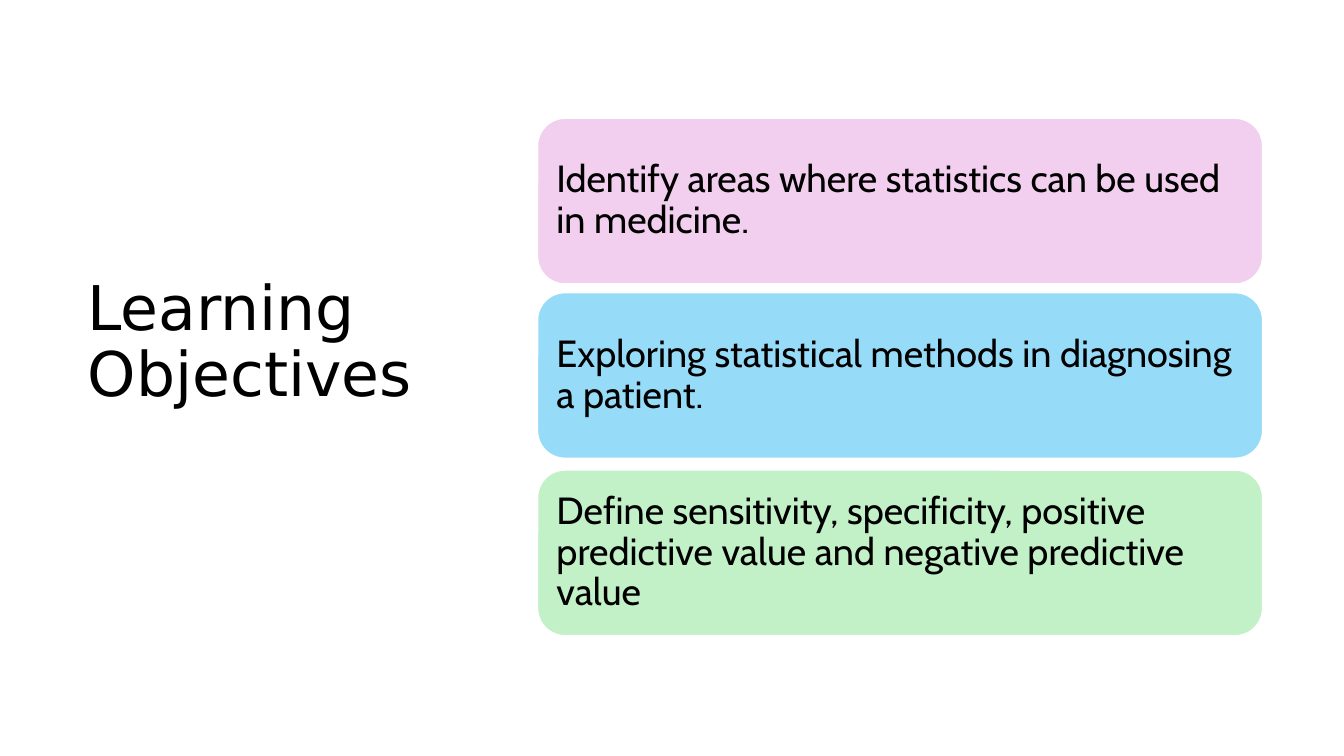
from dataclasses import dataclass

from pptx import Presentation
from pptx.dml.color import RGBColor
from pptx.enum import shapes, text
from pptx.util import Pt


@dataclass
class Card:
    top: float
    fill: str
    words: str


CARDS = [
    Card(84.24, "F2CFEE", "Identify areas where statistics can be used in medicine."),
    Card(208.8, "96DCF8", "Exploring statistical methods in diagnosing a patient."),
    Card(335.52, "C2F1C8", "Define sensitivity, specificity, positive predictive value "
                           "and negative predictive value"),
]
LEFT, WIDTH, HEIGHT = 383.76, 518.4, 118.8
INSET = 8


def paint(target, color: str) -> None:
    target.rgb = RGBColor.from_string(color)


def apply(target, **values) -> None:
    """Set each named attribute of the target."""
    for name, value in values.items():
        setattr(target, name, value)


def write(frame, words: str, face: str, size: float) -> None:
    frame.text = words
    apply(frame, word_wrap=True, auto_size=text.MSO_AUTO_SIZE.NONE,
          vertical_anchor=text.MSO_ANCHOR.MIDDLE)
    para = frame.paragraphs[0]
    apply(para, alignment=text.PP_ALIGN.LEFT, line_spacing=0.9)
    font = para.runs[0].font
    apply(font, name=face, size=Pt(size))
    paint(font.color, "000000")


def draw(slide, card: Card) -> None:
    box = slide.shapes.add_shape(
        shapes.MSO_SHAPE.ROUNDED_RECTANGLE,
        Pt(LEFT), Pt(card.top), Pt(WIDTH), Pt(HEIGHT))
    box.shadow.inherit = False
    box.fill.solid()
    paint(box.fill.fore_color, card.fill)
    paint(box.line.color, "FFFFFF")
    box.line.width = Pt(1.5)
    frame = box.text_frame
    apply(frame, **{f"margin_{side}": Pt(INSET)
                    for side in ("left", "top", "right", "bottom")})
    write(frame, card.words, "Cabin", 27)


def main() -> None:
    deck = Presentation()
    apply(deck, slide_width=Pt(960), slide_height=Pt(540))
    slide = deck.slides.add_slide(deck.slide_layouts.get_by_name("Title Only"))
    title = slide.shapes.title
    apply(title, left=Pt(55.44), top=Pt(72), width=Pt(288), height=Pt(347))
    write(title.text_frame, "Learning Objectives", "DejaVu Sans", 44)
    for card in CARDS:
        draw(slide, card)
    deck.save("out.pptx")


if __name__ == "__main__":
    main()
